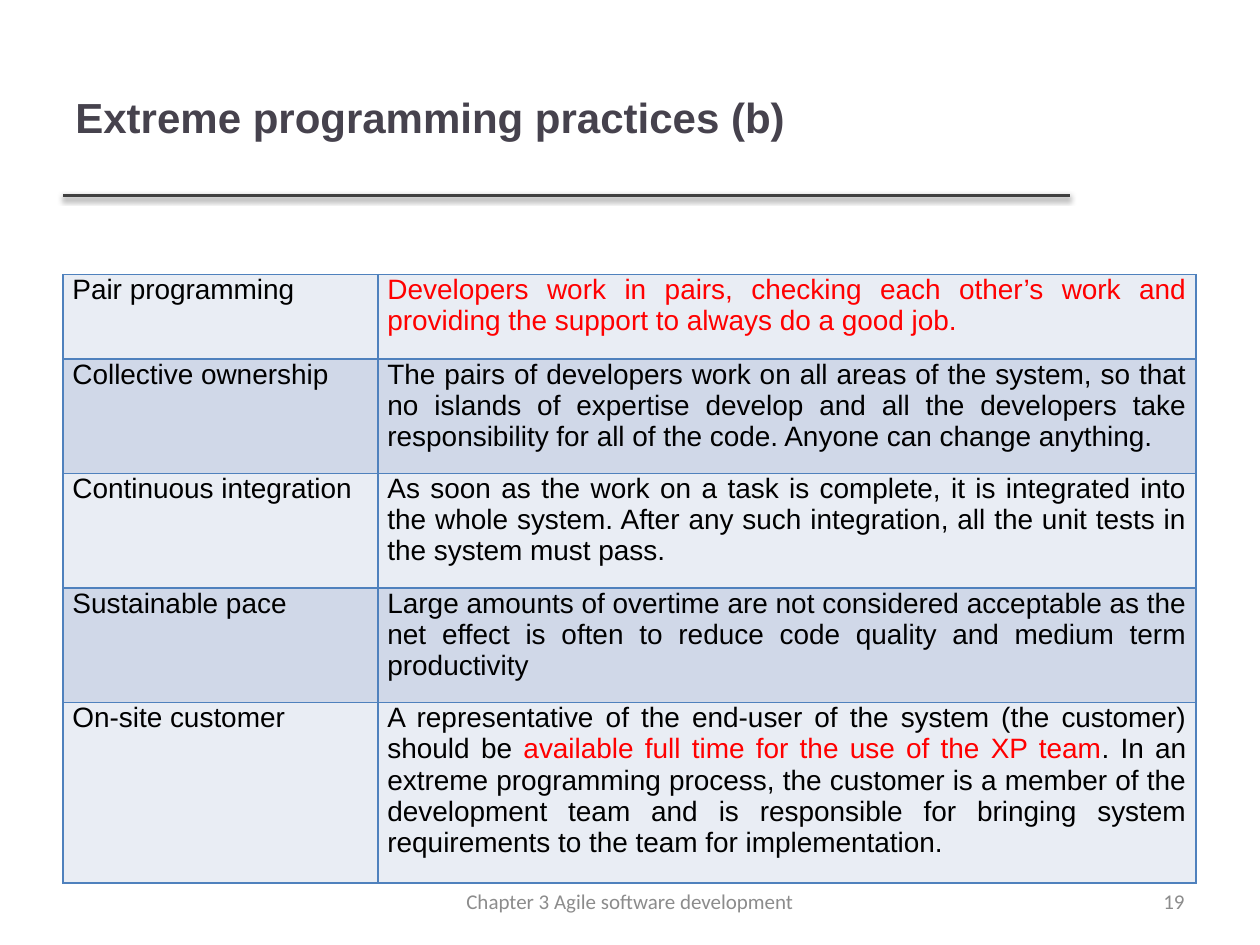
import pptx
import pptx.dml.color
import pptx.enum.shapes
import pptx.enum.text
import pptx.oxml
import pptx.oxml.ns
import pptx.util

Pt = pptx.util.Pt
RGBColor = pptx.dml.color.RGBColor
ALIGN = pptx.enum.text.PP_ALIGN
MIDDLE = pptx.enum.text.MSO_ANCHOR.MIDDLE

TITLE = RGBColor(0x46, 0x42, 0x4D)
RULE = RGBColor(0x40, 0x40, 0x40)
BLACK = RGBColor(0, 0, 0)
RED = RGBColor(0xFF, 0, 0)
GREY = RGBColor(0x8C, 0x8C, 0x8C)
BORDER = RGBColor(0x4F, 0x81, 0xBD)
BANDS = [RGBColor(0xE9, 0xED, 0xF4), RGBColor(0xD0, 0xD8, 0xE8)]
NS = pptx.oxml.ns.nsdecls("a")


def add_text(s, box, text, font, size, color, align, bold=False):
    tf = s.shapes.add_textbox(*[Pt(v) for v in box]).text_frame
    tf.word_wrap = True
    tf.vertical_anchor = MIDDLE
    p = tf.paragraphs[0]
    p.text = text
    p.alignment = align
    p.font.name, p.font.size, p.font.bold = font, Pt(size), bold
    p.font.color.rgb = color


def set_borders(cell):
    tc_pr = cell._tc.get_or_add_tcPr()
    for i, side in enumerate(("lnL", "lnR", "lnT", "lnB")):
        tc_pr.insert(i, pptx.oxml.parse_xml(
            f'<a:{side} {NS} w="{Pt(1)}"><a:solidFill><a:srgbClr val="{BORDER}"/>'
            f'</a:solidFill></a:{side}>'))


prs = pptx.Presentation()
prs.slide_width, prs.slide_height = Pt(720), Pt(540)
s = prs.slides.add_slide(prs.slide_layouts[6])

# Rule under the title, with a soft shadow
line = s.shapes.add_connector(pptx.enum.shapes.MSO_CONNECTOR.STRAIGHT,
                              Pt(36), Pt(111.6), Pt(611.3), Pt(111.6))
line.line.color.rgb = RULE
line.line.width = Pt(2)
line._element.spPr.append(pptx.oxml.parse_xml(
    f'<a:effectLst {NS}><a:outerShdw blurRad="{Pt(3.1)}" dist="{Pt(1.6)}" dir="5400000" '
    'rotWithShape="0"><a:srgbClr val="000000"><a:alpha val="38000"/></a:srgbClr>'
    '</a:outerShdw></a:effectLst>'))

# Title
add_text(s, (36, 21.6, 574.6, 90), "Extreme programming practices (b)",
         "Arial", 24, TITLE, ALIGN.LEFT, bold=True)

# Practices: name, row height, runs of the description
practices = [
    ("Pair programming", 48.2, [
        ("Developers work in pairs, checking each other’s work and providing the support "
         "to always do a good job.", RED)]),
    ("Collective ownership", 65.5, [
        ("The pairs of developers work on all areas of the system, so that no islands of "
         "expertise develop and all the developers take responsibility for all of the code. "
         "Anyone can change anything.", BLACK)]),
    ("Continuous integration", 65.5, [
        ("As soon as the work on a task is complete, it is integrated into the whole system. "
         "After any such integration, all the unit tests in the system must pass.", BLACK)]),
    ("Sustainable pace", 65.5, [
        ("Large amounts of overtime are not considered acceptable as the net effect is often "
         "to reduce code quality and medium term productivity", BLACK)]),
    ("On-site customer", 100.8, [
        ("A representative of the end-user of the system (the customer) should be ", BLACK),
        ("available full time for the use of the XP team", RED),
        (". In an extreme programming process, the customer is a member of the development "
         "team and is responsible for bringing system requirements to the team for "
         "implementation.", BLACK)]),
]
height = sum(h for _, h, _ in practices)
table = s.shapes.add_table(len(practices), 2, Pt(36), Pt(156.9), Pt(647.3), Pt(height)).table
table.first_row = table.horz_banding = False
table.columns[0].width, table.columns[1].width = Pt(180), Pt(467.3)

for i, (name, row_height, description) in enumerate(practices):
    table.rows[i].height = Pt(row_height)
    for j, runs in enumerate(([(name, BLACK)], description)):
        cell = table.cell(i, j)
        cell.margin_left = cell.margin_right = Pt(5.4)
        cell.margin_top, cell.margin_bottom = 0, Pt(7.2)
        cell.fill.solid()
        cell.fill.fore_color.rgb = BANDS[i % 2]
        set_borders(cell)
        p = cell.text_frame.paragraphs[0]
        p.alignment = ALIGN.JUSTIFY
        p.font.name, p.font.size = "Arial", Pt(16)
        for text, color in runs:
            r = p.add_run()
            r.text = text
            r.font.color.rgb = color

# Slide number and footer
add_text(s, (516, 500.5, 168, 28.8), "19", "Calibri", 12, GREY, ALIGN.RIGHT)
add_text(s, (246, 500.5, 228, 28.8), "Chapter 3 Agile software development",
         "Calibri", 12, GREY, ALIGN.CENTER)

prs.save("out.pptx")
